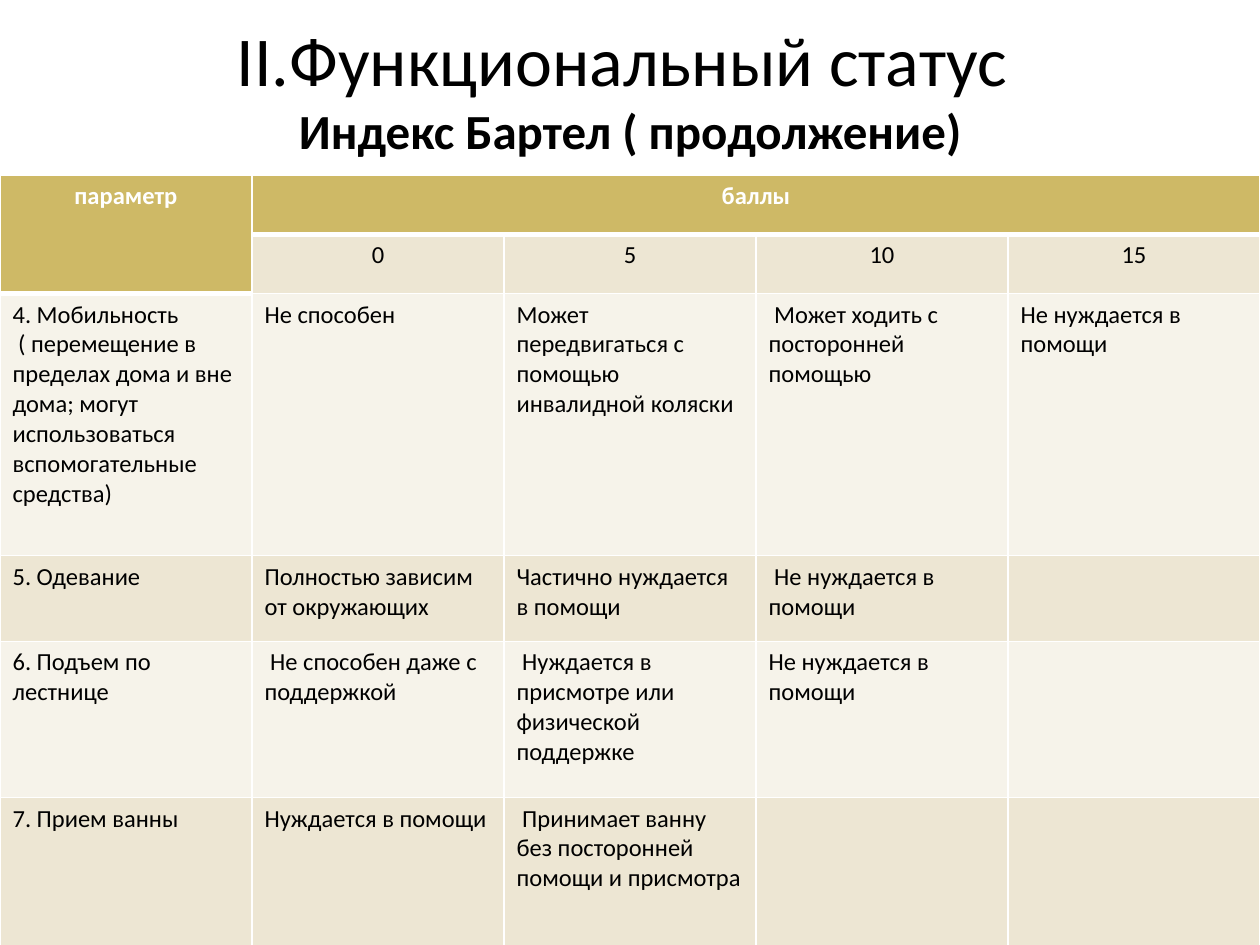
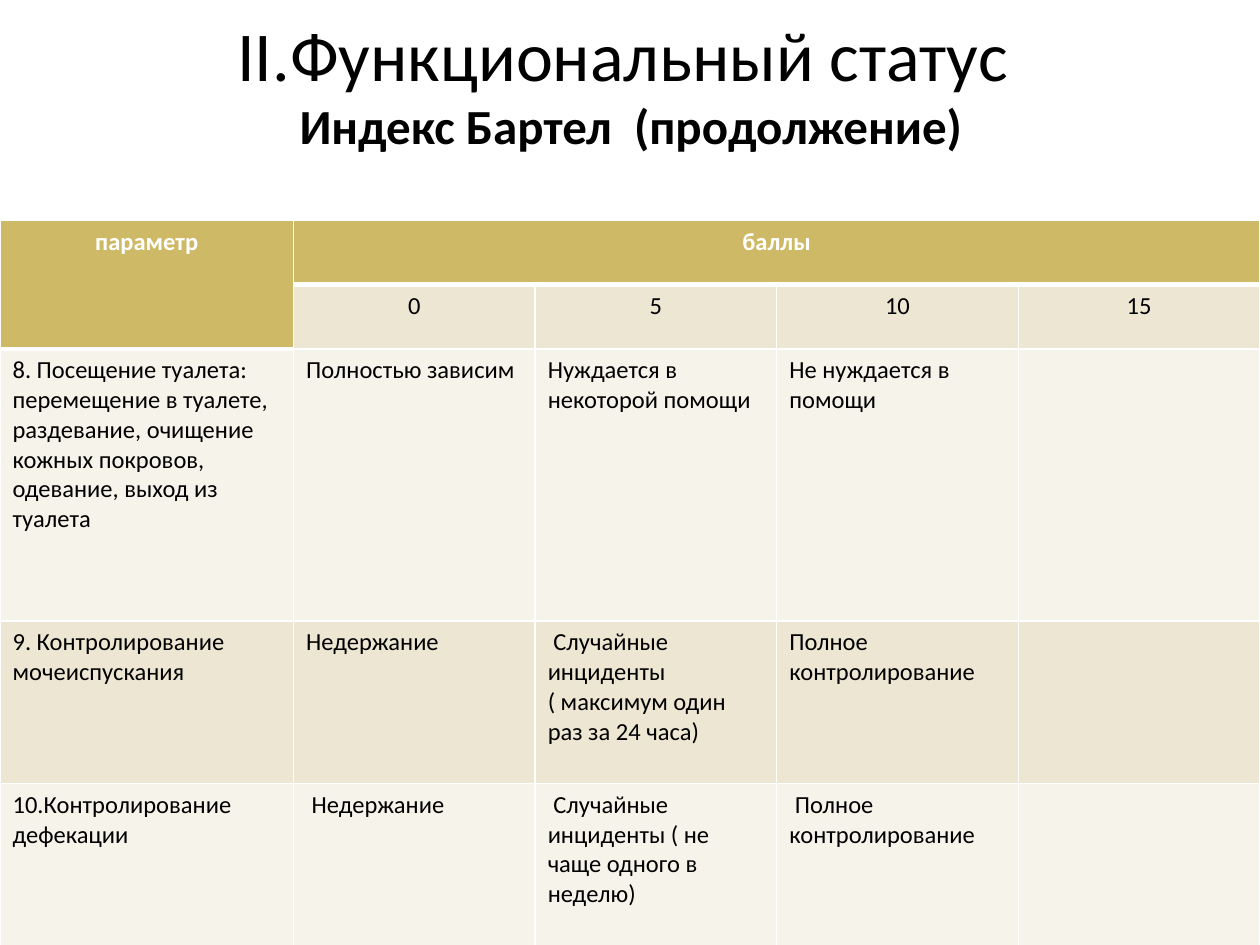
from dataclasses import dataclass

from lxml import etree
from pptx import Presentation
from pptx.dml.color import RGBColor
from pptx.enum import text
from pptx.oxml import ns
from pptx.util import Inches, Pt

FONT = "Calibri"
BLACK = RGBColor(0x00, 0x00, 0x00)
WHITE = RGBColor(0xFF, 0xFF, 0xFF)
GOLD = RGBColor(0xCE, 0xB9, 0x66)
SAND = RGBColor(0xED, 0xE6, 0xD3)
CREAM = RGBColor(0xF6, 0xF3, 0xEA)

SLIDE_W, SLIDE_H = 10, 7.5
HEADING = "II.Функциональный статус "
SCORES = ["0", "5", "10", "15"]
HEADER_ROWS = [["параметр", "баллы"], ["", *SCORES]]
THIN, THICK = 1, 3


@dataclass(frozen=True)
class IndexSlide:
    subtitle: str
    title_box: tuple[float, float, float, float]
    table_top: float
    parameter_width: float
    row_heights: list[float]
    rows: list[list[str]]


SLIDES = [
    IndexSlide(
        subtitle="Индекс Бартел ( продолжение)",
        title_box=(0.5, 0, 9, 1.39),
        table_top=1.39,
        parameter_width=2,
        row_heights=[0.47, 0.47, 2.08, 0.68, 1.24, 1.19],
        rows=[
            ["4. Мобильность\n ( перемещение в пределах дома и вне дома; "
             "могут использоваться вспомогательные средства)",
             "Не способен",
             "Может передвигаться с помощью инвалидной коляски",
             " Может ходить с посторонней помощью",
             "Не нуждается в помощи"],
            ["5. Одевание",
             "Полностью зависим от окружающих",
             "Частично нуждается в помощи",
             " Не нуждается в помощи"],
            ["6. Подъем по лестнице",
             " Не способен даже с поддержкой",
             " Нуждается в присмотре или физической поддержке",
             "Не нуждается в помощи"],
            ["7. Прием ванны",
             "Нуждается в помощи",
             " Принимает ванну без посторонней помощи и присмотра"],
        ],
    ),
    IndexSlide(
        subtitle="Индекс Бартел  (продолжение)",
        title_box=(0.28, 0, 9.45, 1.31),
        table_top=1.75,
        parameter_width=2.33,
        row_heights=[0.51, 0.51, 2.16, 1.29, 1.29],
        rows=[
            ["8. Посещение туалета: перемещение в туалете, раздевание, "
             "очищение кожных покровов, одевание, выход из туалета",
             "Полностью зависим",
             "Нуждается в некоторой помощи",
             "Не нуждается в помощи"],
            ["9. Контролирование мочеиспускания",
             "Недержание",
             " Случайные инциденты ( максимум один раз за 24 часа)",
             "Полное контролирование"],
            ["10.Контролирование дефекации",
             " Недержание",
             " Случайные инциденты ( не чаще одного в неделю)",
             " Полное контролирование"],
        ],
    ),
]


def write(p, words: str, *, size: float, bold: bool = False,
          color: RGBColor = BLACK, align=text.PP_ALIGN.LEFT) -> None:
    p.alignment = align
    r = p.add_run()
    r.text = words
    r.font.name, r.font.size, r.font.bold = FONT, Pt(size), bold
    r.font.color.rgb = color


def add_title(slide, page: IndexSlide) -> None:
    sp = slide.shapes.title
    sp.left, sp.top, sp.width, sp.height = map(Inches, page.title_box)
    tf = sp.text_frame
    tf.auto_size = text.MSO_AUTO_SIZE.NONE
    tf.vertical_anchor = text.MSO_ANCHOR.MIDDLE
    p = tf.paragraphs[0]
    write(p, HEADING, size=40, align=text.PP_ALIGN.CENTER)
    p.add_line_break()
    write(p, page.subtitle, size=28, bold=True, align=text.PP_ALIGN.CENTER)


def set_borders(cell, top: float, bottom: float) -> None:
    tc_pr = cell._tc.get_or_add_tcPr()
    for side, width in (("L", THIN), ("R", THIN), ("T", top), ("B", bottom)):
        ln = etree.SubElement(tc_pr, ns.qn(f"a:ln{side}"), w=str(Pt(width)))
        fill = etree.SubElement(ln, ns.qn("a:solidFill"))
        etree.SubElement(fill, ns.qn("a:srgbClr"), val=str(WHITE))


def is_header(row: int, col: int) -> bool:
    return row == 0 or (row == 1 and col == 0)


def fill_cell(cell, row: int, col: int, words: str) -> None:
    header = is_header(row, col)
    below_header = row > 0 and is_header(row - 1, col)
    set_borders(cell, top=THICK if below_header else THIN,
                bottom=THICK if header else THIN)
    cell.fill.solid()
    cell.fill.fore_color.rgb = GOLD if header else (SAND if row % 2 else CREAM)
    if not words:
        return
    tf = cell.text_frame
    for i, line in enumerate(words.split("\n")):
        p = tf.add_paragraph() if i else tf.paragraphs[0]
        write(p, line, size=14, bold=header, color=WHITE if header else BLACK,
              align=text.PP_ALIGN.CENTER if row < 2 else text.PP_ALIGN.LEFT)


def add_index_table(slide, page: IndexSlide) -> None:
    rows = HEADER_ROWS + page.rows
    n_cols = 1 + len(SCORES)
    table = slide.shapes.add_table(
        len(rows), n_cols, Inches(0), Inches(page.table_top),
        Inches(SLIDE_W), Inches(SLIDE_H - page.table_top)).table
    score_width = (SLIDE_W - page.parameter_width) / len(SCORES)
    for col, column in enumerate(table.columns):
        column.width = Inches(score_width if col else page.parameter_width)
    for row, height in enumerate(page.row_heights):
        table.rows[row].height = Inches(height)
        for col in range(n_cols):
            words = rows[row][col] if col < len(rows[row]) else ""
            fill_cell(table.cell(row, col), row, col, words)
    table.cell(0, 0).merge(table.cell(1, 0))
    table.cell(0, 1).merge(table.cell(0, n_cols - 1))


def main() -> None:
    prs = Presentation()
    prs.slide_width, prs.slide_height = Inches(SLIDE_W), Inches(SLIDE_H)
    title_only = prs.slide_layouts[5]
    for page in SLIDES:
        slide = prs.slides.add_slide(title_only)
        add_title(slide, page)
        add_index_table(slide, page)
    prs.save("out.pptx")


if __name__ == "__main__":
    main()
